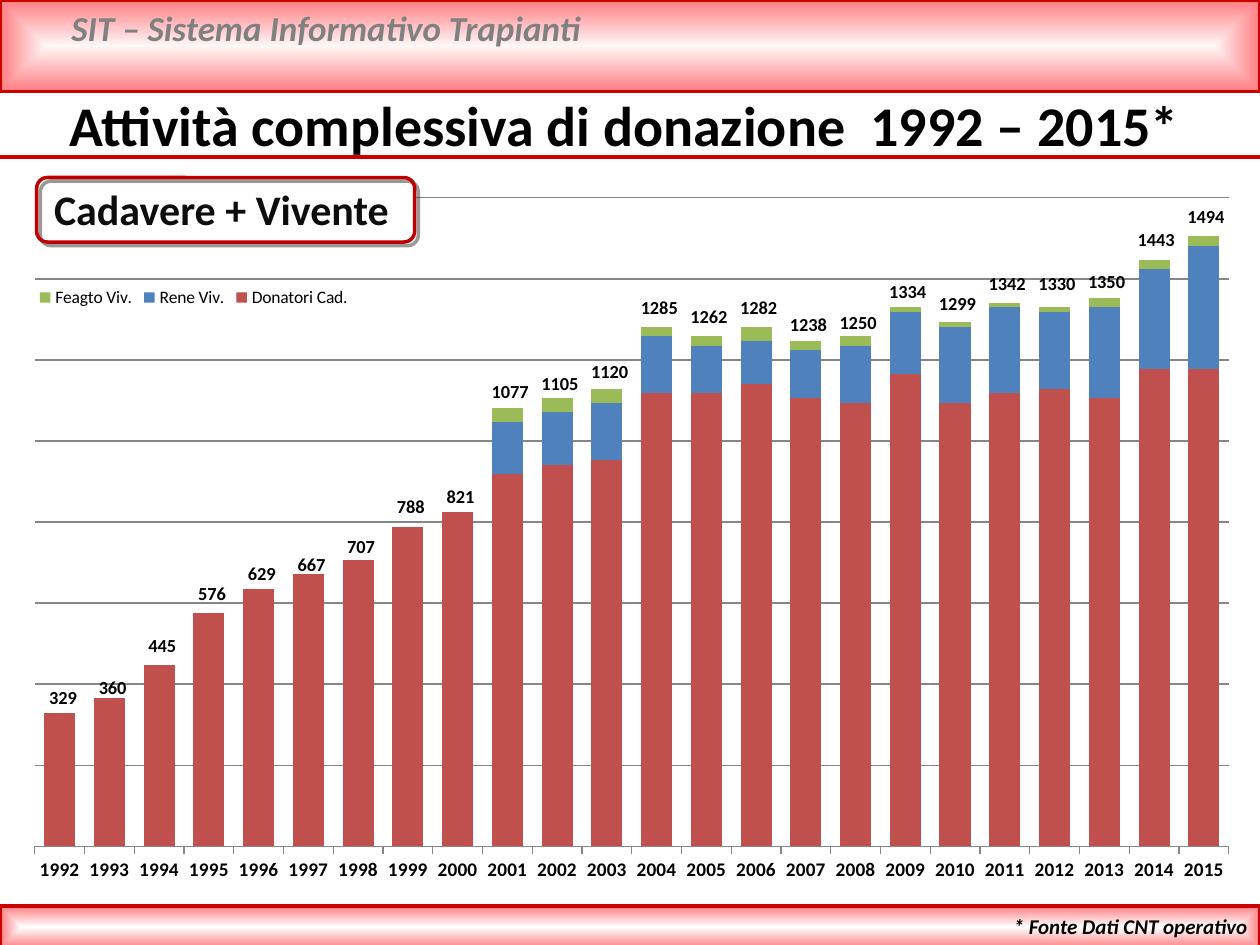
"""Build the slide on donation activity, 1992 to 2015."""
from dataclasses import dataclass
from typing import Any

from lxml import etree
from pptx import Presentation
from pptx import util as u
from pptx.chart import data
from pptx.dml import color
from pptx.enum import chart as ch, shapes as sh, text as tx
from pptx.oxml import ns

HUES = {
    "black": "000000", "ink": "0D0D0D", "grey": "808080", "grid": "868686",
    "white": "FFFFFF", "pale": "FFF6F6", "pink": "FF7C80",
    "red": "CC0000", "dark": "C00000",
    "cad": "C0504D", "rene": "4F81BD", "liver": "9BBB59",
}
FONT = "Calibri"
LEFT, MID, RIGHT = tx.PP_ALIGN.LEFT, tx.PP_ALIGN.CENTER, tx.PP_ALIGN.RIGHT

CAD = [28, 31, 38, 49, 54, 57, 60, 67, 70, 78, 80, 81,
       95, 95, 97, 94, 93, 99, 93, 95, 96, 94, 100, 100]
RENE = [0] * 9 + [11, 11, 12, 12, 10, 9, 10, 12, 13, 16, 18, 16, 19, 21, 26]
LIVER = [0] * 9 + [3, 3, 3, 2, 2, 3, 2, 2, 1, 1, 1, 1, 2, 2, 2]
SUMS = [329, 360, 445, 576, 629, 667, 707, 788, 821, 1077, 1105, 1120,
        1285, 1262, 1282, 1238, 1250, 1334, 1299, 1342, 1330, 1350, 1443, 1494]
TOPS = [13.7, 13.5, 12.65, 11.61, 11.2, 11.02, 10.67, 9.86, 9.65, 7.53,
        7.38, 7.14, 5.84, 6.02, 5.84, 6.18, 6.15, 5.52, 5.77, 5.37, 5.37,
        5.32, 4.47, 4.01]


@dataclass
class Box:
    x: float
    y: float
    w: float
    h: float

    def cm(self) -> list[u.Length]:
        return [u.Cm(v) for v in (self.x, self.y, self.w, self.h)]


@dataclass
class Note:
    box: Box
    text: str
    size: float
    hue: str = "black"
    align: Any = LEFT
    slant: bool = False
    wrap: bool = True
    pad: float = 0.25


@dataclass
class Band:
    box: Box
    core: str


@dataclass
class Row:
    name: str
    vals: list[int]
    hue: str


ROWS = [Row("Donatori Cad.", CAD, "cad"), Row("Rene Viv.", RENE, "rene"),
        Row("Feagto Viv.", LIVER, "liver")]
BANDS = [Band(Box(0, 0, 25.4, 1.85), "pale"),
         Band(Box(0, 18.26, 25.4, 0.86), "white")]


def rgb(hue: str) -> color.RGBColor:
    return color.RGBColor.from_string(HUES[hue])


def style(font: Any, size: float, hue: str = "black", bold: bool = True) -> None:
    font.name, font.size, font.bold = FONT, u.Pt(size), bold
    font.color.rgb = rgb(hue)


def edge(line: Any, hue: str, width: float = 2) -> None:
    line.color.rgb = rgb(hue)
    line.width = u.Pt(width)


def write(frame: Any, note: Note) -> None:
    frame.word_wrap = note.wrap
    frame.vertical_anchor = tx.MSO_ANCHOR.TOP
    frame.margin_left = u.Cm(note.pad)
    frame.text = note.text
    para = frame.paragraphs[0]
    para.alignment = note.align
    style(para.font, note.size, note.hue)
    para.font.italic = note.slant


def add_note(slide: Any, note: Note) -> None:
    write(slide.shapes.add_textbox(*note.box.cm()).text_frame, note)


def add_band(slide: Any, band: Band) -> None:
    rect = slide.shapes.add_shape(sh.MSO_SHAPE.RECTANGLE, *band.box.cm())
    rect.shadow.inherit = False
    rect.fill.gradient()
    for stop, hue, pos in zip(rect.fill.gradient_stops, (band.core, "pink"), (0, 1)):
        stop.color.rgb = rgb(hue)
        stop.position = pos
    grad = rect.element.spPr.find(ns.qn("a:gradFill"))
    grad.remove(grad.find(ns.qn("a:lin")))
    way = etree.SubElement(grad, ns.qn("a:path"), {"path": "shape"})
    etree.SubElement(way, ns.qn("a:fillToRect"), dict.fromkeys("ltrb", "50000"))
    edge(rect.line, "red")


def add_rule(slide: Any, y: float) -> None:
    rule = slide.shapes.add_connector(
        sh.MSO_CONNECTOR.STRAIGHT, 0, u.Cm(y), u.Cm(25.4), u.Cm(y))
    edge(rule.line, "red")
    etree.SubElement(rule.element.spPr, ns.qn("a:effectLst"))


def place(node: Any, spot: int, dims: tuple, inner: bool = False) -> None:
    for old in node.findall(ns.qn("c:layout")):
        node.remove(old)
    lay = etree.Element(ns.qn("c:layout"))
    man = etree.SubElement(lay, ns.qn("c:manualLayout"))
    tags = [("layoutTarget", "inner")] if inner else []
    tags += [("xMode", "edge"), ("yMode", "edge"), *zip("xywh", dims)]
    for tag, val in tags:
        etree.SubElement(man, ns.qn("c:" + tag), val=str(val))
    node.insert(spot, lay)


def add_bars(slide: Any, box: Box) -> None:
    table = data.CategoryChartData()
    table.categories = [str(year) for year in range(1992, 2016)]
    for row in ROWS:
        table.add_series(row.name, row.vals)
    chart = slide.shapes.add_chart(
        ch.XL_CHART_TYPE.COLUMN_STACKED, *box.cm(), table).chart
    style(chart.font, 10, bold=False)
    chart.has_title = False
    plot = chart.plots[0]
    plot.gap_width, plot.overlap, plot.vary_by_categories = 60, 100, False
    for bar, row in zip(plot.series, ROWS):
        bar.format.fill.solid()
        bar.format.fill.fore_color.rgb = rgb(row.hue)
    cat, val = chart.category_axis, chart.value_axis
    style(cat.tick_labels.font, 11)
    cat.major_tick_mark = ch.XL_TICK_MARK.OUTSIDE
    edge(cat.format.line, "grid", 0.75)
    val.minimum_scale, val.maximum_scale, val.major_unit = 0, 136, 17
    val.has_major_gridlines = True
    edge(val.major_gridlines.format.line, "grid", 0.75)
    val.visible = False
    chart.has_legend = True
    chart.legend.position = ch.XL_LEGEND_POSITION.LEFT
    chart.legend.include_in_layout = True
    style(chart.legend.font, 10, bold=False)
    root = chart.element
    place(root.find(".//" + ns.qn("c:plotArea")), 0, (0.017, 0.032, 0.969, 0.911), True)
    place(root.find(".//" + ns.qn("c:legend")), 1, (0.016, 0.152, 0.26, 0.04))


def add_tag(slide: Any) -> None:
    base = slide.shapes.add_shape(
        sh.MSO_SHAPE.RECTANGLE, *Box(0.64, 3.58, 7.72, 1.3).cm())
    base.shadow.inherit = False
    base.fill.solid()
    base.fill.fore_color.rgb = rgb("white")
    base.line.fill.background()
    write(base.text_frame, Note(Box(0, 0, 0, 0), "Cadavere + Vivente", 24, "ink", pad=0.45))
    ring = slide.shapes.add_shape(
        sh.MSO_SHAPE.ROUNDED_RECTANGLE, *Box(0.74, 3.58, 7.62, 1.3).cm())
    ring.fill.background()
    edge(ring.line, "dark")
    ring.shadow.inherit = False
    glow = ring.element.spPr.find(ns.qn("a:effectLst"))
    cast = etree.SubElement(glow, ns.qn("a:outerShdw"), blurRad="0", dist="38100",
                            dir="2700000", algn="tl", rotWithShape="0")
    tint = etree.SubElement(cast, ns.qn("a:srgbClr"), val=HUES["black"])
    etree.SubElement(tint, ns.qn("a:alpha"), val="40000")


def main() -> None:
    deck = Presentation()
    deck.slide_width, deck.slide_height = u.Cm(25.4), u.Cm(19.05)
    slide = deck.slides.add_slide(deck.slide_layouts[5])
    for band in BANDS:
        add_band(slide, band)
    add_note(slide, Note(Box(1.19, 0, 22.81, 1.12), "SIT – Sistema Informativo Trapianti",
                         20, "grey", slant=True))
    add_rule(slide, 3.17)
    add_bars(slide, Box(0.28, 3.53, 24.84, 14.35))
    head = Note(Box(0, 1.7, 25.2, 1.63),
                "Attività complessiva di donazione  1992 – 2015*", 32, align=MID)
    title = slide.shapes.title
    title.left, title.top, title.width, title.height = head.box.cm()
    write(title.text_frame, head)
    add_tag(slide)
    add_note(slide, Note(Box(20.09, 18.29, 5.31, 0.76), "* Fonte Dati CNT operativo",
                         12, align=RIGHT, slant=True, wrap=False))
    for i, (top, total) in enumerate(zip(TOPS, SUMS)):
        add_note(slide, Note(Box(0.52 + i * 23.04 / 23, top, 1.5, 0.71),
                             str(total), 10.5, align=MID))
    deck.save("out.pptx")


if __name__ == "__main__":
    main()
